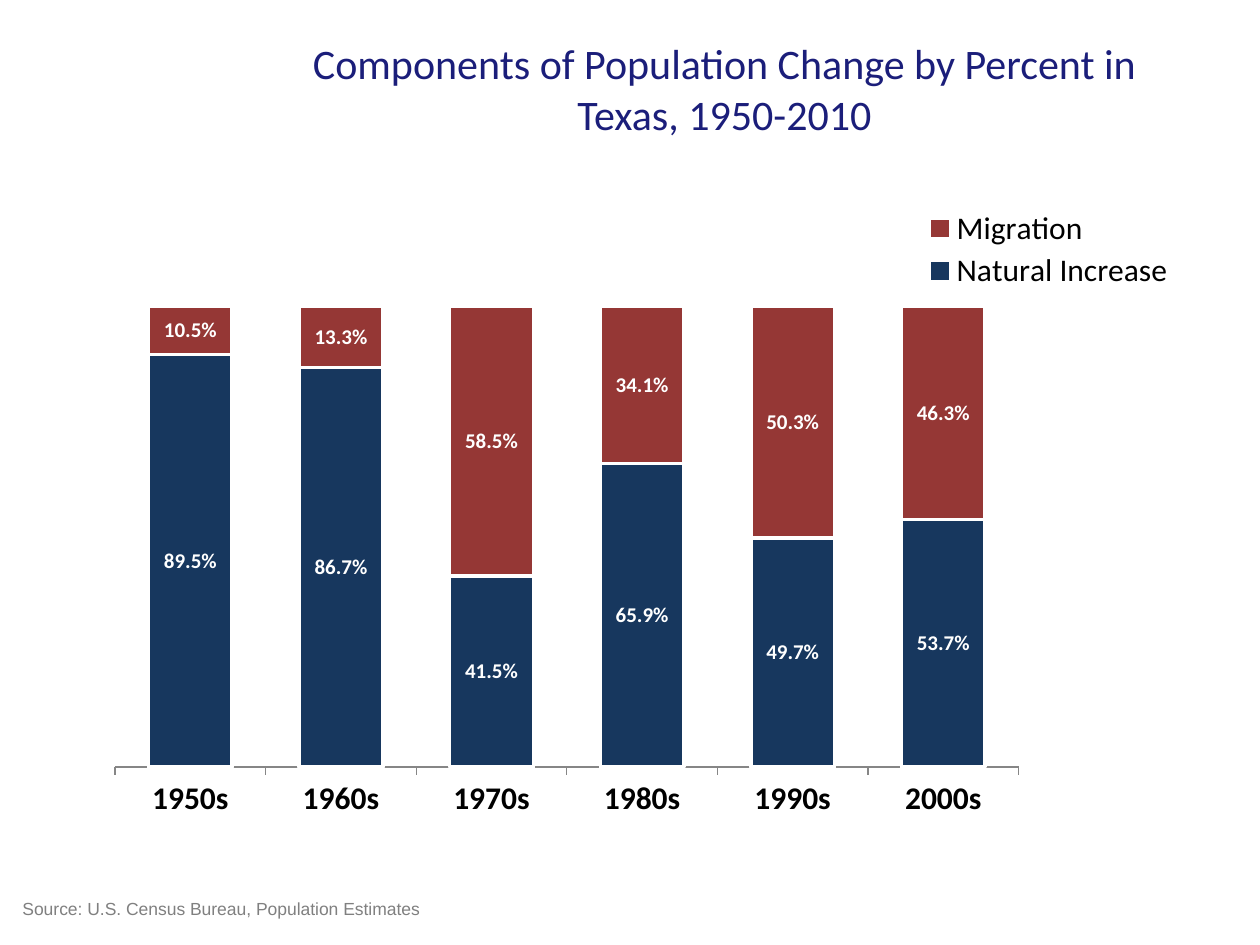
import pptx
import pptx.chart.data
import pptx.dml.color
import pptx.enum.chart
import pptx.enum.text
import pptx.oxml
import pptx.oxml.ns
import pptx.util
from pptx.util import Inches

NAVY = pptx.dml.color.RGBColor(0x17, 0x37, 0x5E)
RED = pptx.dml.color.RGBColor(0x95, 0x37, 0x35)
TITLE_BLUE = pptx.dml.color.RGBColor(0x1B, 0x1E, 0x7A)
GRAY = pptx.dml.color.RGBColor(0x80, 0x80, 0x80)
AXIS_GRAY = pptx.dml.color.RGBColor(0x86, 0x86, 0x86)
WHITE = pptx.dml.color.RGBColor(0xFF, 0xFF, 0xFF)
BLACK = pptx.dml.color.RGBColor(0, 0, 0)

DECADES = ["1950s", "1960s", "1970s", "1980s", "1990s", "2000s"]
COMPONENTS = [
    ("Natural Increase", [0.895, 0.867, 0.415, 0.659, 0.497, 0.537], NAVY),
    ("Migration", [0.105, 0.133, 0.585, 0.341, 0.503, 0.463], RED),
]


def style_font(font, name, size, color, bold=False):
    font.name = name
    font.size = pptx.util.Pt(size)
    font.color.rgb = color
    font.bold = bold


def add_text(slide, text, box, name, size, color):
    frame = slide.shapes.add_textbox(*map(Inches, box)).text_frame
    frame.word_wrap = True
    paragraph = frame.paragraphs[0]
    paragraph.text = text
    style_font(paragraph.font, name, size, color)
    return frame


def place_part(part, position, x, y, width, height, inner=False):
    for old_layout in part.findall(pptx.oxml.ns.qn("c:layout")):
        part.remove(old_layout)
    target = '<c:layoutTarget val="inner"/>' if inner else ""
    part.insert(position, pptx.oxml.parse_xml(
        f'<c:layout {pptx.oxml.ns.nsdecls("c")}><c:manualLayout>{target}'
        '<c:xMode val="edge"/><c:yMode val="edge"/>'
        f'<c:x val="{x}"/><c:y val="{y}"/><c:w val="{width}"/><c:h val="{height}"/>'
        '</c:manualLayout></c:layout>'))


def style_component(component, color):
    component.format.fill.solid()
    component.format.fill.fore_color.rgb = color
    component.format.line.color.rgb = WHITE
    component.format.line.width = pptx.util.Pt(2)
    labels = component.data_labels
    labels.show_value = True
    labels.number_format = "0.0%"
    labels.number_format_is_linked = False
    labels.position = pptx.enum.chart.XL_LABEL_POSITION.CENTER
    style_font(labels.font, "Calibri", 12, WHITE, True)


def style_axes(chart):
    decades = chart.category_axis
    decades.major_tick_mark = pptx.enum.chart.XL_TICK_MARK.OUTSIDE
    decades.format.line.color.rgb = AXIS_GRAY
    decades.format.line.width = pptx.util.Pt(0.75)
    style_font(decades.tick_labels.font, "Calibri", 18, BLACK, True)
    shares = chart.value_axis
    shares.minimum_scale = 0
    shares.maximum_scale = 1
    shares.has_major_gridlines = False
    shares.tick_labels.number_format = "0.0%"
    shares.tick_labels.number_format_is_linked = False
    shares.visible = False


def add_population_chart(slide):
    data = pptx.chart.data.CategoryChartData(number_format="0.0%")
    data.categories = DECADES
    for name, shares, _ in COMPONENTS:
        data.add_series(name, shares)
    chart = slide.shapes.add_chart(
        pptx.enum.chart.XL_CHART_TYPE.COLUMN_STACKED,
        Inches(0.72), Inches(1.58), Inches(9.69), Inches(5.01), data).chart
    chart.has_title = False
    style_font(chart.font, "Calibri", 18, BLACK)
    plot = chart.plots[0]
    plot.gap_width = 80
    plot.overlap = 100
    plot.vary_by_categories = False
    for component, (_, _, color) in zip(plot.series, COMPONENTS):
        style_component(component, color)
    style_axes(chart)
    chart.has_legend = True
    chart.legend.position = pptx.enum.chart.XL_LEGEND_POSITION.RIGHT
    chart.legend.include_in_layout = False
    style_font(chart.legend.font, "Calibri", 18, BLACK)
    chart_part = chart.element.chart
    place_part(chart_part.plotArea, 0, 0.02, 0.17, 0.74, 0.73, inner=True)
    place_part(chart_part.find(pptx.oxml.ns.qn("c:legend")), 1, 0.68, 0.01, 0.21, 0.14)


def main():
    deck = pptx.Presentation()
    deck.slide_width = Inches(10)
    deck.slide_height = Inches(7.5)
    slide = deck.slides.add_slide(deck.slide_layouts[6])
    add_population_chart(slide)
    title = add_text(slide, "Components of Population Change by Percent in Texas, 1950-2010",
                     (2, 0.25, 7.5, 1.08), "Calibri", 24, TITLE_BLUE)
    title.paragraphs[0].alignment = pptx.enum.text.PP_ALIGN.CENTER
    source = add_text(slide, "Source: U.S. Census Bureau, Population Estimates",
                      (0.08, 7.08, 5, 0.27), "Arial", 10, GRAY)
    source.auto_size = pptx.enum.text.MSO_AUTO_SIZE.SHAPE_TO_FIT_TEXT
    deck.save("out.pptx")


if __name__ == "__main__":
    main()
